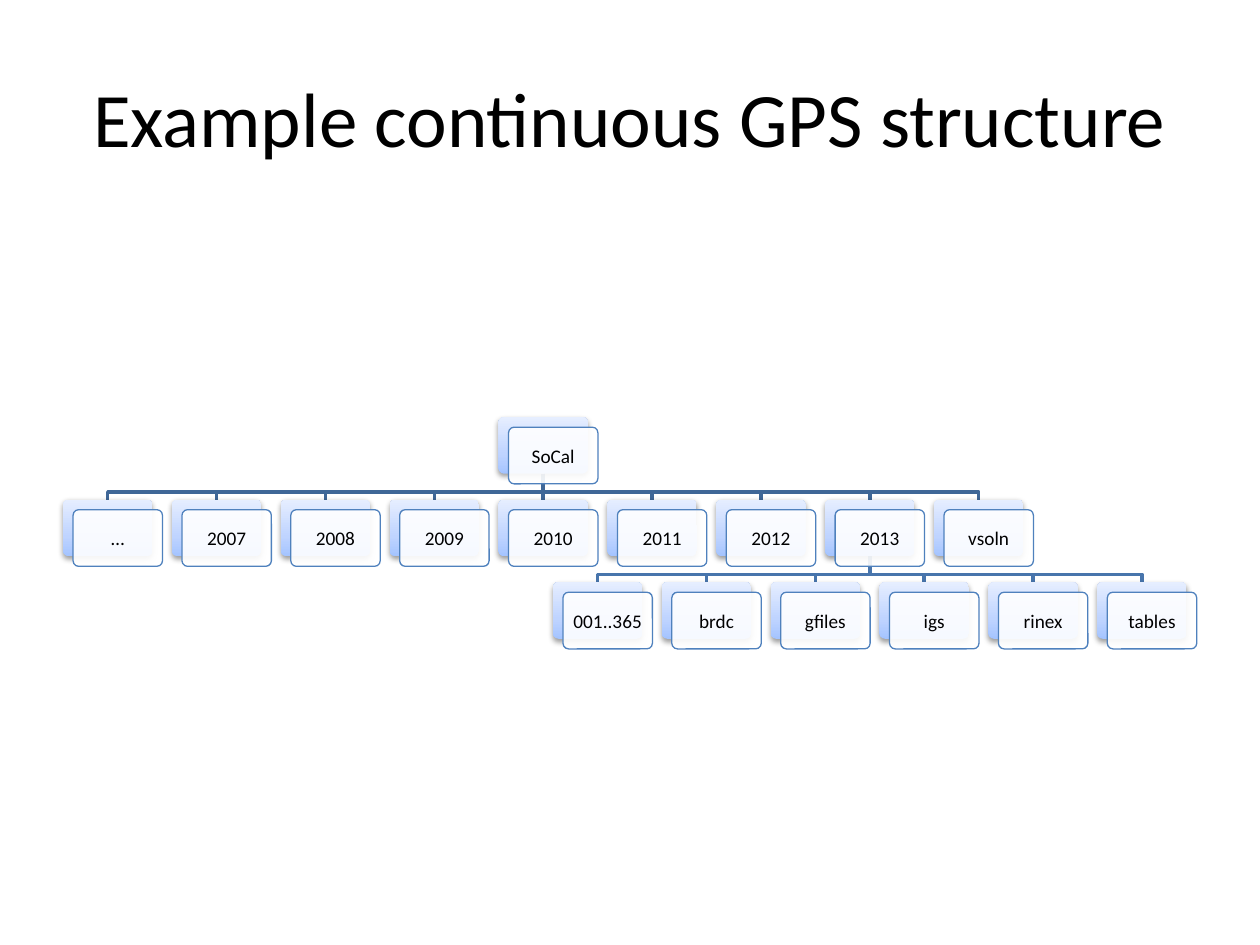
import copy
from dataclasses import dataclass

import pptx
import pptx.util
from lxml import etree
from pptx.dml.color import RGBColor
from pptx.enum.shapes import MSO_CONNECTOR, MSO_SHAPE
from pptx.enum.text import MSO_ANCHOR, PP_ALIGN
from pptx.oxml.ns import qn


@dataclass(frozen=True)
class Theme:
    font: str = "Calibri"
    ink: str = "000000"
    paper: str = "FFFFFF"
    edge: str = "4F81BD"
    fade: tuple = ((0, "A4C4FF"), (0.35, "BFD4FF"), (1, "E6EEFF"))
    links: tuple = ("3F6797", "4875AC")  # one colour per level
    head: float = 44
    label: float = 11


@dataclass(frozen=True)
class Grid:
    left: float = 0.5
    top: float = 3.31
    col: float = 0.864
    row: float = 0.655
    wide: float = 0.71
    high: float = 0.45
    shift: float = 0.08  # offset of the front card
    knee: float = 0.7  # share of the gap above the bend

    def spot(self, col: float, row: int) -> tuple:
        return self.left + col * self.col, self.top + row * self.row


@dataclass(frozen=True)
class Level:
    names: tuple
    start: float  # first column
    root: int = 0  # index of the parent in the level above


THEME = Theme()
GRID = Grid()
LEVELS = (
    Level(("SoCal",), 4),
    Level(("…", "2007", "2008", "2009", "2010", "2011", "2012", "2013", "vsoln"), 0),
    Level(("001..365", "brdc", "gfiles", "igs", "rinex", "tables"), 4.5, 7),
)


def rgb(code: str) -> RGBColor:
    return RGBColor.from_string(code)


def write(frame, text: str, size: float) -> None:
    frame.vertical_anchor = MSO_ANCHOR.MIDDLE
    para = frame.paragraphs[0]
    para.alignment = PP_ALIGN.CENTER
    run = para.add_run()
    run.text = text
    run.font.name = THEME.font
    run.font.size = pptx.util.Pt(size)
    run.font.color.rgb = rgb(THEME.ink)


def plate(slide, x: float, y: float):
    """Add a plain rounded card of the grid's size."""
    box = (pptx.util.Inches(v) for v in (x, y, GRID.wide, GRID.high))
    shape = slide.shapes.add_shape(MSO_SHAPE.ROUNDED_RECTANGLE, *box)
    shape.adjustments[0] = 0.1
    shape.shadow.inherit = False
    return shape


def shade(shape) -> None:
    """Give the shape the three-stop fade and a soft shadow below."""
    shape.fill.gradient()
    shape.fill.gradient_angle = 90
    props = shape._element.spPr
    stops = props.find(".//" + qn("a:gsLst"))
    stops.append(copy.deepcopy(stops[0]))
    for stop, (place, code) in zip(shape.fill.gradient_stops, THEME.fade):
        stop.position = place
        stop.color.rgb = rgb(code)
    shadow = etree.SubElement(
        props.find(qn("a:effectLst")), qn("a:outerShdw"),
        blurRad="40000", dist="20000", dir="5400000", rotWithShape="0")
    tint = etree.SubElement(shadow, qn("a:srgbClr"), val=THEME.ink)
    etree.SubElement(tint, qn("a:alpha"), val="38000")


def card(slide, text: str, col: float, row: int):
    """Draw a back and a labelled front card; return the back one."""
    x, y = GRID.spot(col, row)
    back = plate(slide, x, y)
    shade(back)
    back.line.fill.background()

    front = plate(slide, x + GRID.shift, y + GRID.shift)
    front.fill.solid()
    front.fill.fore_color.rgb = rgb(THEME.paper)
    tint = front._element.spPr.find(qn("a:solidFill"))[0]
    etree.SubElement(tint, qn("a:alpha"), val="90000")
    front.line.color.rgb = rgb(THEME.edge)
    front.line.width = pptx.util.Pt(0.75)
    frame = front.text_frame
    frame.word_wrap = True
    frame.margin_left = frame.margin_right = pptx.util.Inches(0.05)
    frame.margin_top = frame.margin_bottom = pptx.util.Inches(0.05)
    write(frame, text, THEME.label)
    return back


def link(slide, root, leaf, code: str) -> None:
    """Join two cards, straight down or with a bend, behind all cards."""
    x, y = root.left + root.width // 2, root.top + root.height
    end, foot = leaf.left + leaf.width // 2, leaf.top
    if abs(end - x) < pptx.util.Inches(0.01):
        line = slide.shapes.add_connector(MSO_CONNECTOR.STRAIGHT, x, y, end, foot)
        line.begin_connect(root, 2)
        line.end_connect(leaf, 0)
        etree.SubElement(line._element.spPr, qn("a:effectLst"))
    else:
        bend = y + round((foot - y) * GRID.knee)
        pen = slide.shapes.build_freeform(x, y)
        pen.add_line_segments([(x, bend), (end, bend), (end, foot)], close=False)
        line = pen.convert_to_shape()
        line.fill.background()
        line.shadow.inherit = False
    line.line.color.rgb = rgb(code)
    line.line.width = pptx.util.Pt(2)
    slide.shapes.title._element.addnext(line._element)


def main() -> None:
    deck = pptx.Presentation()
    deck.slide_width = pptx.util.Inches(10)
    deck.slide_height = pptx.util.Inches(7.5)
    slide = deck.slides.add_slide(deck.slide_layouts[5])

    title = slide.shapes.title
    title.left, title.top = round(deck.slide_width * 0.05), round(deck.slide_height * 0.04)
    title.width = round(deck.slide_width * 0.9)
    title.height = pptx.util.Inches(1.25)
    write(title.text_frame, "Example continuous GPS structure", THEME.head)

    tree = [
        [card(slide, name, level.start + i, row) for i, name in enumerate(level.names)]
        for row, level in enumerate(LEVELS)
    ]
    for above, cards, level, code in zip(tree, tree[1:], LEVELS[1:], THEME.links):
        for leaf in cards:
            link(slide, above[level.root], leaf, code)

    deck.save("out.pptx")


if __name__ == "__main__":
    main()
